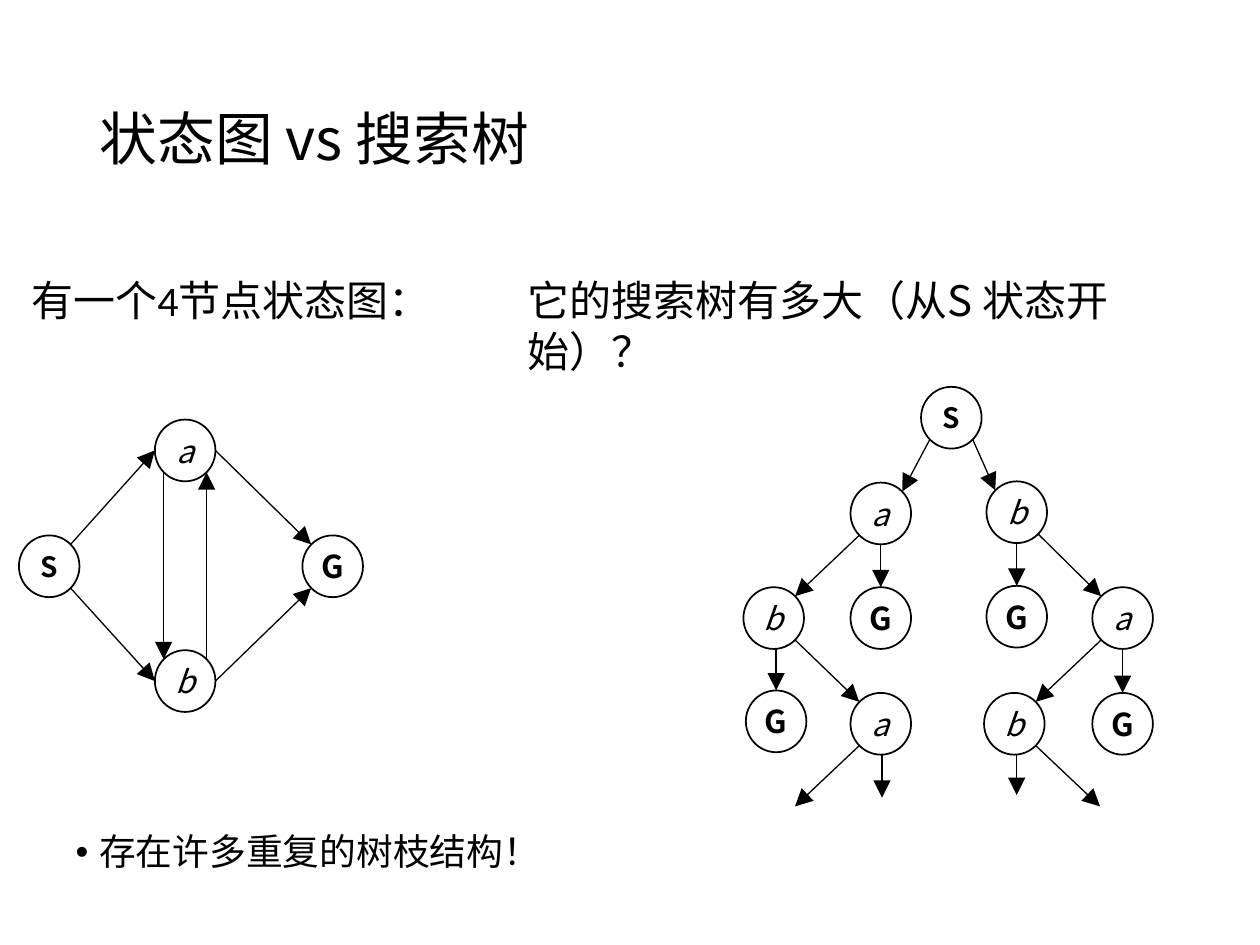
"""Build a slide that sets a state graph beside its search tree."""
from dataclasses import dataclass
from typing import NamedTuple

from lxml import etree
from pptx import Presentation
from pptx.dml.color import RGBColor
from pptx.enum.shapes import MSO_CONNECTOR, MSO_SHAPE
from pptx.enum.text import MSO_ANCHOR, MSO_AUTO_SIZE, PP_ALIGN
from pptx.oxml.ns import qn
from pptx.util import Pt

LEFT, MID = PP_ALIGN.LEFT, PP_ALIGN.CENTER
TOP, CENTRE = MSO_ANCHOR.TOP, MSO_ANCHOR.MIDDLE
FIXED, GROW = MSO_AUTO_SIZE.NONE, MSO_AUTO_SIZE.SHAPE_TO_FIT_TEXT
DISC, LINE = MSO_SHAPE.FLOWCHART_CONNECTOR, MSO_CONNECTOR.STRAIGHT


@dataclass(frozen=True)
class Theme:
    ink: RGBColor = RGBColor(0, 0, 0)
    font: str = "Noto Sans CJK SC"
    plain: str = "Calibri"
    title: float = 33
    text: float = 24
    point: float = 21
    node: float = 18
    start: float = 16
    rim: float = 1
    edge: float = 0.75
    wide: float = 34.6
    high: float = 35.3


class Node(NamedTuple):
    text: str
    x: float
    y: float


class Edge(NamedTuple):
    tail: str
    out: str
    head: str
    into: str


THEME = Theme()
DIAG = 0.71
PORTS = {
    "n": (0, -1), "s": (0, 1), "e": (1, 0), "w": (-1, 0), "c": (0, 0),
    "ne": (DIAG, -DIAG), "nw": (-DIAG, -DIAG),
    "se": (DIAG, DIAG), "sw": (-DIAG, DIAG),
}

GRAPH = {
    "S": Node("S", 28.1, 323.6),
    "G": Node("G", 190.1, 323.6),
    "b": Node("b", 105.8, 389.2),
    "a": Node("a", 105.8, 257.4),
}
LINKS = [
    Edge("S", "se", "b", "w"), Edge("a", "sw", "b", "nw"),
    Edge("b", "ne", "a", "se"), Edge("a", "e", "G", "nw"),
    Edge("b", "e", "G", "sw"), Edge("S", "ne", "a", "w"),
]

TREE = {
    "S": Node("S", 543.6, 238.7),
    "Sa": Node("a", 503.3, 293.4),
    "Sb": Node("b", 581, 292.7),
    "SaG": Node("G", 503.3, 353.2),
    "SbG": Node("G", 581, 352.4),
    "Sba": Node("a", 641.5, 353.2),
    "Sab": Node("b", 442.1, 353.2),
    "SabG": Node("G", 443.5, 412.2),
    "Saba": Node("a", 503.3, 413.6),
    "SbaG": Node("G", 641.5, 413.6),
    "Sbab": Node("b", 579.6, 413.6),
    "Sabab": Node("", 454.3, 460.8),
    "SabaG": Node("", 504, 455.8),
    "SbabG": Node("", 581, 454.3),
    "Sbaba": Node("", 628.6, 460.8),
}
TWIGS = [
    Edge("S", "sw", "Sa", "ne"), Edge("S", "se", "Sb", "nw"),
    Edge("Sa", "sw", "Sab", "ne"), Edge("Sa", "s", "SaG", "n"),
    Edge("Sb", "s", "SbG", "n"), Edge("Sb", "se", "Sba", "nw"),
    Edge("Sab", "s", "SabG", "n"), Edge("Sab", "se", "Saba", "nw"),
    Edge("Sba", "sw", "Sbab", "ne"), Edge("Sba", "s", "SbaG", "n"),
    Edge("Saba", "sw", "Sabab", "c"), Edge("Saba", "s", "SabaG", "c"),
    Edge("Sbab", "s", "SbabG", "c"), Edge("Sbab", "se", "Sbaba", "c"),
]


def write(shape, text: str, *, size: float, font: str = THEME.font,
          bold: bool = False, slant: bool = False, align=LEFT, anchor=TOP,
          wrap: bool = True, fit=FIXED, lead: float = 1, gap: float = 0):
    """Put formatted text in a shape and return its paragraph."""
    frame = shape.text_frame
    frame.auto_size, frame.word_wrap = fit, wrap
    frame.vertical_anchor = anchor
    para = frame.paragraphs[0]
    para.alignment, para.line_spacing = align, lead
    para.space_before = Pt(gap)
    run = para.add_run()
    run.text = text
    run.font.name, run.font.size = font, Pt(size)
    run.font.bold, run.font.italic = bold, slant
    run.font.color.rgb = THEME.ink
    face = etree.SubElement(run.font._element, qn("a:ea"))
    face.set("typeface", THEME.font)
    return para


def place(shape, x: float, y: float, wide: float, high: float) -> None:
    """Move and size a shape."""
    shape.left, shape.top = Pt(x), Pt(y)
    shape.width, shape.height = Pt(wide), Pt(high)


def draw_node(shapes, node: Node) -> None:
    """Draw a round node about its centre."""
    wide, high = THEME.wide, THEME.high
    disc = shapes.add_shape(DISC, Pt(node.x - wide / 2), Pt(node.y - high / 2),
                            Pt(wide), Pt(high))
    disc.shadow.inherit = False
    disc.fill.background()
    disc.line.color.rgb, disc.line.width = THEME.ink, Pt(THEME.rim)
    size = THEME.start if node.text == "S" else THEME.node
    state = node.text.islower()
    write(disc, node.text, size=size, bold=not state, slant=state,
          align=MID, anchor=CENTRE, wrap=False)


def find_port(node: Node, port: str) -> tuple[float, float]:
    """Return the point of a port on the rim of a node."""
    dx, dy = PORTS[port]
    return node.x + dx * THEME.wide / 2, node.y + dy * THEME.high / 2


def draw_edge(shapes, nodes: dict[str, Node], edge: Edge) -> None:
    """Draw an arrow between two ports, upright when it leaves from below."""
    x, y = find_port(nodes[edge.tail], edge.out)
    right, low = find_port(nodes[edge.head], edge.into)
    if edge.out == "s":
        x = right
    line = shapes.add_connector(LINE, Pt(x), Pt(y), Pt(right), Pt(low))
    line.line.color.rgb, line.line.width = THEME.ink, Pt(THEME.edge)
    tip = etree.SubElement(line.line._get_or_add_ln(), qn("a:tailEnd"))
    for key, value in (("type", "triangle"), ("w", "lg"), ("len", "lg")):
        tip.set(key, value)
    etree.SubElement(line._element.spPr, qn("a:effectLst"))


def draw_net(shapes, nodes: dict[str, Node], edges: list[Edge]) -> None:
    """Draw all named nodes and then their edges."""
    for node in nodes.values():
        if node.text:
            draw_node(shapes, node)
    for edge in edges:
        draw_edge(shapes, nodes, edge)


def add_note(shapes, text: str, x: float, wide: float,
             font: str = THEME.font) -> None:
    """Add a caption above a net."""
    box = shapes.add_textbox(Pt(x), Pt(153.4), Pt(wide), Pt(36))
    write(box, text, size=THEME.text, font=font, fit=GROW)


def main() -> None:
    """Build and save the slide."""
    deck = Presentation()
    deck.slide_width, deck.slide_height = Pt(720), Pt(540)
    slide = deck.slides.add_slide(deck.slide_layouts[1])
    shapes = slide.shapes
    place(shapes.title, 49.7, 28.8, 620.6, 104.4)
    write(shapes.title, "状态图 vs 搜索树", size=THEME.title,
          anchor=CENTRE, lead=0.9)
    body = slide.placeholders[1]
    place(body, 36, 473, 648, 36.7)
    para = write(body, "存在许多重复的树枝结构！", size=THEME.point,
                 lead=0.9, gap=7.5)
    props = para._p.get_or_add_pPr()
    props.set("marL", str(Pt(13.5)))
    props.set("indent", str(Pt(-13.5)))
    draw_net(shapes, GRAPH, LINKS)
    add_note(shapes, "有一个4节点状态图：", 10.8, 306, THEME.plain)
    draw_net(shapes.add_group_shape().shapes, TREE, TWIGS)
    add_note(shapes, "它的搜索树有多大（从S 状态开始）？", 294.5, 382.3)
    deck.save("out.pptx")


if __name__ == "__main__":
    main()
